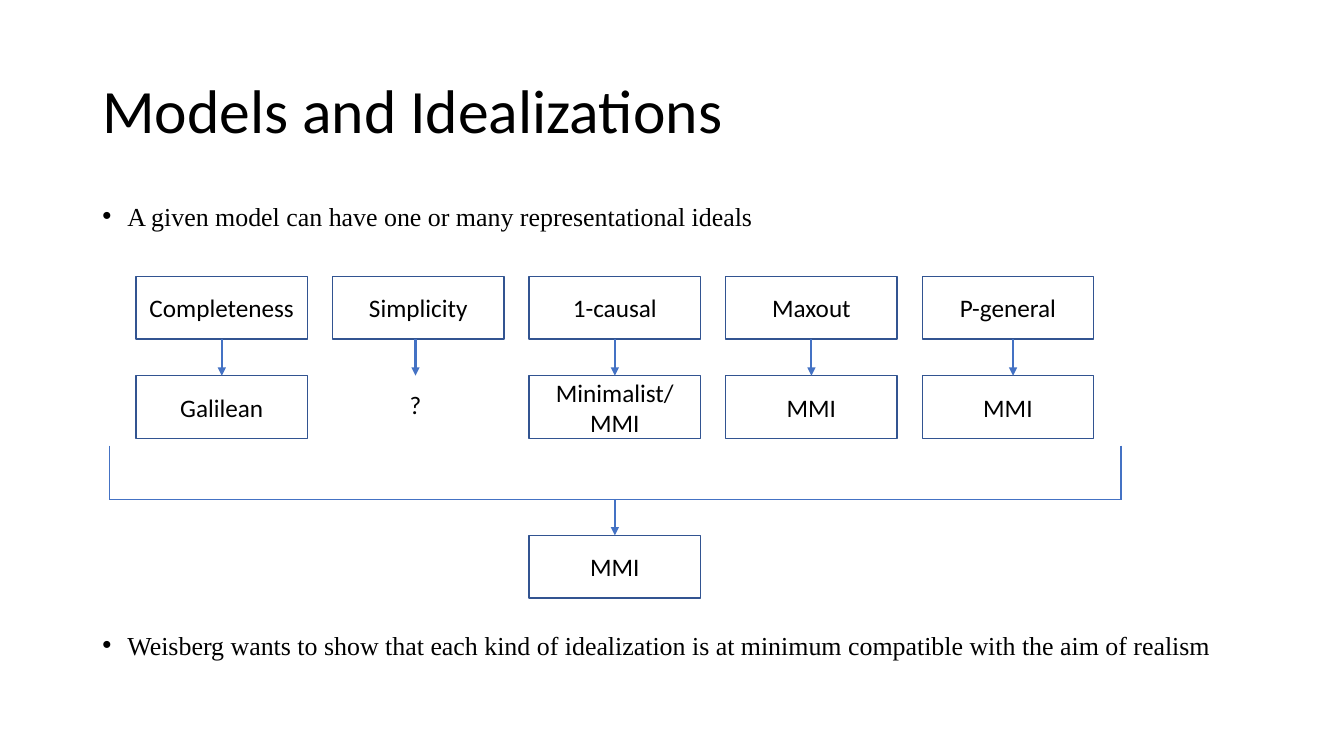
"""Build a slide that maps representational ideals to kinds of idealization."""
from lxml import etree
from pptx import Presentation
from pptx.dml.color import RGBColor
from pptx.enum.shapes import MSO_CONNECTOR, MSO_SHAPE
from pptx.enum.text import MSO_ANCHOR, PP_ALIGN
from pptx.oxml.ns import qn
from pptx.util import Pt

BLACK = RGBColor(0x00, 0x00, 0x00)
OUTLINE = RGBColor(0x32, 0x54, 0x91)
BLUE = RGBColor(0x44, 0x72, 0xC4)
RECTANGLE = MSO_SHAPE.RECTANGLE
STRAIGHT = MSO_CONNECTOR.STRAIGHT
MIDDLE = MSO_ANCHOR.MIDDLE
CENTER = PP_ALIGN.CENTER
BOTTOM_SIDE, TOP_SIDE = 2, 0

BOX_WIDTH, BOX_HEIGHT = 122.4, 44.8
FIRST_LEFT, COLUMN_STEP = 97.2, 140.4
IDEAL_TOP, KIND_TOP, RESULT_TOP = 197.4, 268.4, 382.4
BRACKET_LEFT, BRACKET_RIGHT = 78.4, 800.8
BRACKET_TOP, BRACKET_BOTTOM = 318.4, 356.8

COLUMNS = [
    ("Completeness", "Galilean", 0),
    ("Simplicity", "?", -2),
    ("1-causal", "Minimalist/ MMI", 0),
    ("Maxout", "MMI", 0),
    ("P-general", "MMI", 3.6),
]
BULLETS = [
    ("A given model can have one or many representational ideals", 10),
    ("Weisberg wants to show that each kind of idealization is at minimum "
     "compatible with the aim of realism", 289),
]


def add_box(left, top, text, outlined=True):
    shape = slide.shapes.add_shape(
        RECTANGLE, Pt(left), Pt(top), Pt(BOX_WIDTH), Pt(BOX_HEIGHT))
    shape.shadow.inherit = False
    shape.fill.background()
    if outlined:
        shape.line.color.rgb = OUTLINE
        shape.line.width = Pt(1)
    else:
        shape.line.fill.background()
    shape.text_frame.word_wrap = True
    shape.text_frame.vertical_anchor = MIDDLE
    paragraph = shape.text_frame.paragraphs[0]
    paragraph.alignment = CENTER
    run = paragraph.add_run()
    run.text = text
    run.font.name = "Calibri"
    run.font.size = Pt(18)
    run.font.color.rgb = BLACK
    return shape


def add_line(start_x, start_y, end_x, end_y, arrow=False):
    connector = slide.shapes.add_connector(
        STRAIGHT, Pt(start_x), Pt(start_y), Pt(end_x), Pt(end_y))
    connector.line.color.rgb = BLUE
    connector.line.width = Pt(1.5 if arrow else 1)
    if arrow:
        etree.SubElement(connector.line._ln, qn("a:tailEnd"), type="triangle")
    etree.SubElement(connector._element.spPr, qn("a:effectLst"))
    return connector


presentation = Presentation()
presentation.slide_width = Pt(960)
presentation.slide_height = Pt(540)
slide = presentation.slides.add_slide(presentation.slide_layouts[6])

title = slide.shapes.add_textbox(Pt(66), Pt(28.8), Pt(828), Pt(104.4))
title.text_frame.word_wrap = True
title.text_frame.vertical_anchor = MIDDLE
paragraph = title.text_frame.paragraphs[0]
paragraph.line_spacing = 0.9
run = paragraph.add_run()
run.text = "Models and Idealizations"
run.font.name = "Calibri"
run.font.size = Pt(44)
run.font.color.rgb = BLACK

body = slide.shapes.add_textbox(Pt(66), Pt(143.8), Pt(828), Pt(360))
body.text_frame.word_wrap = True
for index, (text, space_before) in enumerate(BULLETS):
    paragraph = body.text_frame.add_paragraph() if index else body.text_frame.paragraphs[0]
    paragraph.line_spacing = 0.8
    paragraph.space_before = Pt(space_before)
    properties = paragraph._p.get_or_add_pPr()
    properties.set("marL", str(Pt(18)))
    properties.set("indent", str(-Pt(18)))
    etree.SubElement(properties, qn("a:buFont"), typeface="Arial")
    etree.SubElement(properties, qn("a:buChar"), char="•")
    run = paragraph.add_run()
    run.text = text
    run.font.name = "Times New Roman"
    run.font.size = Pt(18.5)
    run.font.color.rgb = BLACK

for index, (ideal, kind, arrow_shift) in enumerate(COLUMNS):
    left = FIRST_LEFT + index * COLUMN_STEP
    known = kind != "?"
    ideal_box = add_box(left, IDEAL_TOP, ideal)
    kind_box = add_box(left if known else left + arrow_shift,
                       KIND_TOP if known else KIND_TOP - 2, kind, known)
    arrow_x = left + BOX_WIDTH / 2 + arrow_shift
    arrow = add_line(arrow_x, IDEAL_TOP + BOX_HEIGHT, arrow_x, KIND_TOP, arrow=True)
    if arrow_shift == 0:
        arrow.begin_connect(ideal_box, BOTTOM_SIDE)
        arrow.end_connect(kind_box, TOP_SIDE)

for bracket_x in (BRACKET_LEFT, BRACKET_RIGHT):
    add_line(bracket_x, BRACKET_TOP, bracket_x, BRACKET_BOTTOM)
add_line(BRACKET_RIGHT, BRACKET_BOTTOM, BRACKET_LEFT, BRACKET_BOTTOM)

result_left = FIRST_LEFT + 2 * COLUMN_STEP
result_box = add_box(result_left, RESULT_TOP, "MMI")
result_x = result_left + BOX_WIDTH / 2
result_arrow = add_line(result_x, BRACKET_BOTTOM, result_x, RESULT_TOP, arrow=True)
result_arrow.end_connect(result_box, TOP_SIDE)

presentation.save("out.pptx")
